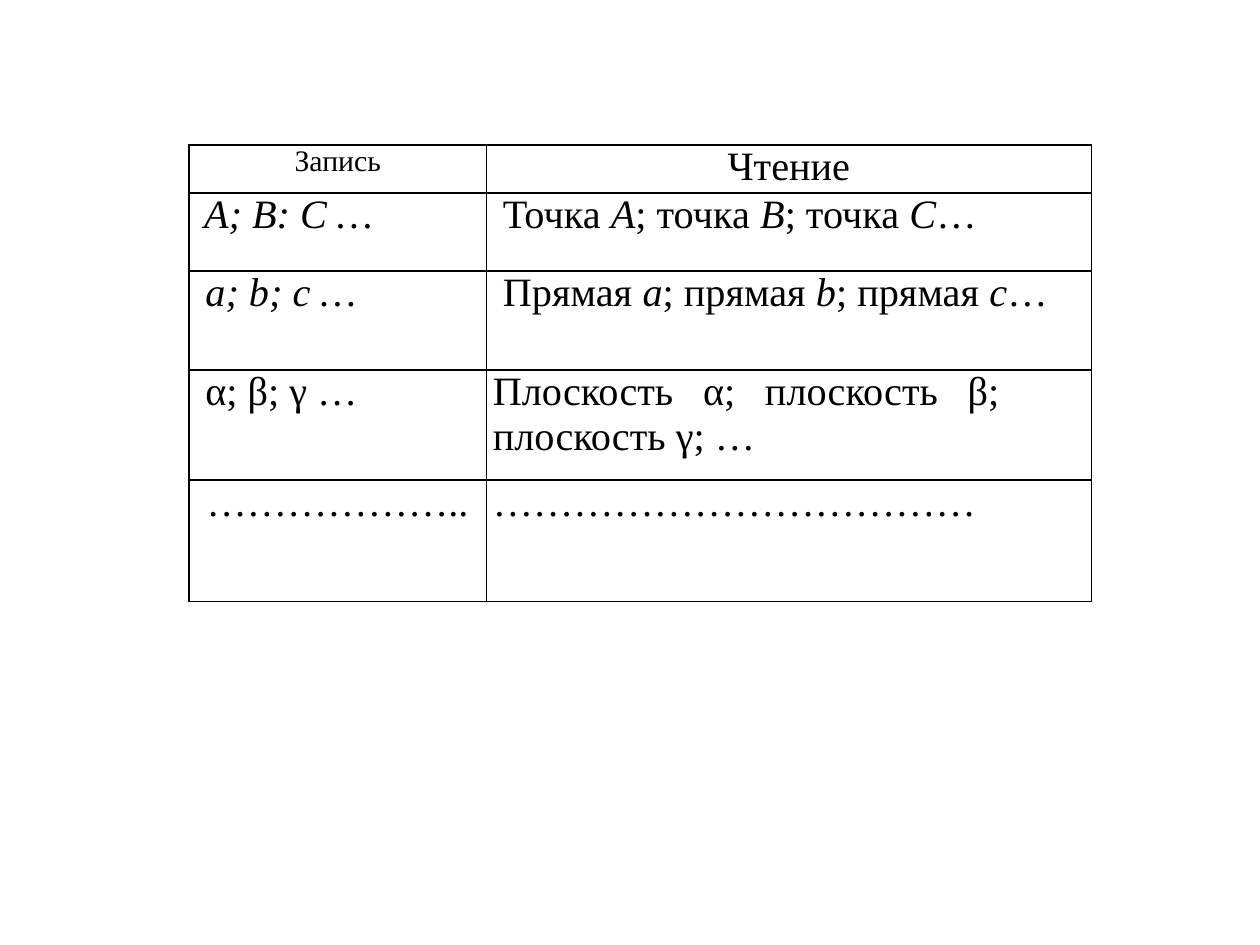
from lxml.etree import SubElement
from pptx import Presentation
from pptx.dml.color import RGBColor
from pptx.enum.text import PP_ALIGN as Align
from pptx.oxml.ns import qn
from pptx.util import Pt

BLACK = RGBColor(0, 0, 0)
FONT = "Times New Roman"
INSET = 3.6
COLUMN_WIDTHS = [170, 345.6]
ROW_HEIGHTS = [27.4, 44.6, 56.6, 63, 69.4]

# Each cell: alignment, left inset, right inset, size, runs of (text, italic)
CELLS = [
    [(Align.CENTER, INSET, INSET, 17, [("Запись", False)]),
     (Align.CENTER, INSET, INSET, 23, [("Чтение", False)])],
    [(Align.JUSTIFY, 8.6, INSET, 23, [("A; B: C …", True)]),
     (Align.JUSTIFY, 9.4, INSET, 23,
      [("Точка ", False), ("A", True), ("; точка ", False), ("B", True),
       ("; точка ", False), ("C", True), ("…", False)])],
    [(Align.JUSTIFY, 9.4, INSET, 23, [("a; b; c …", True)]),
     (Align.JUSTIFY, 9.4, INSET, 23,
      [("Прямая ", False), ("a", True), ("; прямая ", False), ("b", True),
       ("; прямая ", False), ("c", True), ("…", False)])],
    [(Align.JUSTIFY, 9.4, INSET, 23, [("α; β; γ …", False)]),
     (Align.JUSTIFY, INSET, 52, 23,
      [("Плоскость α; плоскость β; плоскость γ; …", False)])],
    [(Align.CENTER, INSET, INSET, 23, [("………………..", False)]),
     (Align.JUSTIFY, INSET, INSET, 23, [("………………………………", False)])],
]


def add_borders(cell):
    properties = cell._tc.get_or_add_tcPr()
    for position, side in enumerate(("a:lnL", "a:lnR", "a:lnT", "a:lnB")):
        line = properties.makeelement(qn(side), {"w": str(Pt(1))})
        fill = SubElement(line, qn("a:solidFill"))
        SubElement(fill, qn("a:srgbClr"), val=str(BLACK))
        properties.insert(position, line)


deck = Presentation()
deck.slide_width, deck.slide_height = Pt(720), Pt(540)
page = deck.slides.add_slide(deck.slide_layouts[6])

table = page.shapes.add_table(
    len(ROW_HEIGHTS), len(COLUMN_WIDTHS), Pt(108), Pt(82.8),
    Pt(sum(COLUMN_WIDTHS)), Pt(sum(ROW_HEIGHTS))).table
table.first_row = False
table.horz_banding = False
for column, width in zip(table.columns, COLUMN_WIDTHS):
    column.width = Pt(width)

for row, height, contents in zip(table.rows, ROW_HEIGHTS, CELLS):
    row.height = Pt(height)
    for cell, (align, left, right, size, runs) in zip(row.cells, contents):
        cell.fill.background()
        add_borders(cell)
        cell.margin_left, cell.margin_right = Pt(left), Pt(right)
        cell.margin_top = cell.margin_bottom = 0
        para = cell.text_frame.paragraphs[0]
        para.alignment = align
        for text, italic in runs:
            span = para.add_run()
            span.text = text
            span.font.name = FONT
            span.font.size = Pt(size)
            span.font.italic = italic
            span.font.color.rgb = BLACK

deck.save("out.pptx")
